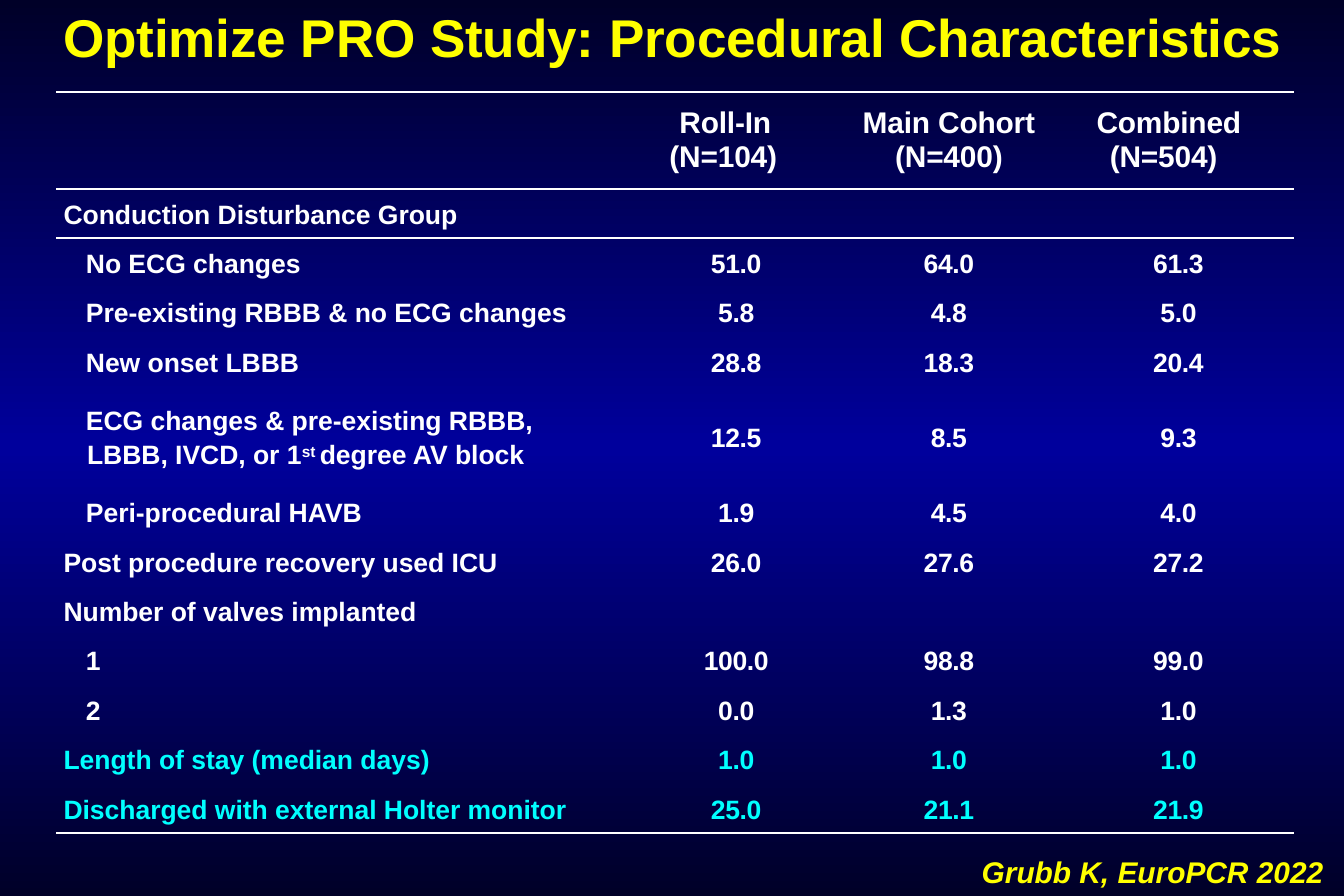
from copy import deepcopy

from lxml.etree import SubElement
from pptx import Presentation
from pptx.dml.color import RGBColor
from pptx.enum.text import MSO_ANCHOR, PP_ALIGN
from pptx.oxml.ns import qn
from pptx.util import Pt

WHITE = RGBColor(0xFF, 0xFF, 0xFF)
YELLOW = RGBColor(0xFF, 0xFF, 0x00)
CYAN = RGBColor(0x00, 0xFF, 0xFF)
NAVY = RGBColor(0x00, 0x00, 0x28)
BLUE = RGBColor(0x00, 0x00, 0x9C)
PLAIN = "{2D5ABB26-0587-4C30-8999-92F81FD0307C}"

COLS = [360.7, 101.5, 151.9, 131.8]
HEAD = [
    ("Roll-In\n(N=104)", (15, 9), PP_ALIGN.LEFT),
    ("Main Cohort\n(N=400)", (0, 0), PP_ALIGN.CENTER),
    ("Combined\n(N=504)", (13, 21), PP_ALIGN.LEFT),
]
ROWS = [
    (0, "Conduction Disturbance Group", ""),
    (1, "No ECG changes", "51.0 64.0 61.3"),
    (1, "Pre-existing RBBB & no ECG changes", "5.8 4.8 5.0"),
    (1, "New onset LBBB", "28.8 18.3 20.4"),
    (1, "ECG changes & pre-existing RBBB,\nLBBB, IVCD, or 1^st ^degree AV block",
     "12.5 8.5 9.3"),
    (1, "Peri-procedural HAVB", "1.9 4.5 4.0"),
    (0, "Post procedure recovery used ICU", "26.0 27.6 27.2"),
    (0, "Number of valves implanted", ""),
    (1, "1", "100.0 98.8 99.0"),
    (1, "2", "0.0 1.3 1.0"),
    (0, "Length of stay (median days)", "1.0 1.0 1.0"),
    (0, "Discharged with external Holter monitor", "25.0 21.1 21.9"),
]


class Deck:
    def __init__(self, wide, high):
        self.show = Presentation()
        self.show.slide_width, self.show.slide_height = Pt(wide), Pt(high)
        self.slide = self.show.slides.add_slide(self.show.slide_layouts[6])
        self.style = {"name": "Arial", "bold": True}

    def back(self, tones):
        fill = self.slide.background.fill
        fill.gradient()
        fill.gradient_angle = 270
        stops = next(self.slide.element.iter(qn("a:gsLst")))
        stops.append(deepcopy(stops[0]))
        for num, (stop, tone) in enumerate(zip(fill.gradient_stops, tones)):
            stop.position = num / (len(tones) - 1)
            stop.color.rgb = tone

    def words(self, frame, text, tone, size, indents=(0, 0), space=0,
              para={}, **more):
        for num, line in enumerate(text.split("\n")):
            item = frame.add_paragraph() if num else frame.paragraphs[0]
            for key, value in para.items():
                setattr(item, key, value)
            if num and "line_spacing" not in para:
                item.space_before = Pt(2.8)
            props = item._p.get_or_add_pPr()
            props.set("marL", str(Pt(indents[num])))
            props.set("indent", "0")
            for part, piece in enumerate(line.split("^")):
                run = item.add_run()
                run.text = piece
                style = {**self.style, "size": Pt(size), **more}
                for key, value in style.items():
                    setattr(run.font, key, value)
                run.font.color.rgb = tone
                marks = run._r.get_or_add_rPr()
                marks.set("spc", str(space))
                if part % 2:
                    marks.set("baseline", "26000")

    def text(self, box, text, tone, size, inset=None, **more):
        frame = self.slide.shapes.add_textbox(*map(Pt, box)).text_frame
        frame.word_wrap = True
        if inset:
            self.inset(frame, inset)
        self.words(frame, text, tone, size, **more)

    def inset(self, item, sides):
        for side, value in zip(("left", "top", "right", "bottom"), sides):
            setattr(item, "margin_" + side, Pt(value))

    def table(self, box, cols, rows):
        frame = self.slide.shapes.add_table(len(rows), len(cols), *map(Pt, box))
        grid = frame.table
        grid.first_row = grid.horz_banding = False
        next(grid._tbl.iter(qn("a:tableStyleId"))).text = PLAIN
        for col, wide in zip(grid.columns, cols):
            col.width = Pt(wide)
        for row, high in zip(grid.rows, rows):
            row.height = Pt(high)
        for cell in grid.iter_cells():
            cell.fill.background()
            cell.vertical_anchor = MSO_ANCHOR.MIDDLE
            self.inset(cell, (0, 0, 0, 0))
        return grid

    def rule(self, cell, sides, tone):
        props = cell._tc.get_or_add_tcPr()
        for num, side in enumerate(sides):
            line = SubElement(props, qn("a:ln" + side), w=str(Pt(1.5)))
            fill = SubElement(line, qn("a:solidFill"))
            SubElement(fill, qn("a:srgbClr"), val=str(tone))
            props.insert(num, line)


def main():
    deck = Deck(810, 540)
    deck.back([NAVY, BLUE, NAVY])
    deck.text((0, 0.7, 810, 39.6), "Optimize PRO Study: Procedural Characteristics",
              YELLOW, 32, inset=(0, 1.7, 0, 0), space=-10,
              para={"alignment": PP_ALIGN.CENTER})
    deck.text((584.6, 511.2, 225.4, 28.8), "Grubb K, EuroPCR 2022",
              YELLOW, 18, italic=True)

    highs = [58.3] + [61.2 if "\n" in label else 29.75 for _, label, _ in ROWS]
    grid = deck.table((33.8, 55.4, sum(COLS), sum(highs)), COLS, highs)
    for col, (text, indents, side) in enumerate(HEAD, 1):
        deck.words(grid.cell(0, col).text_frame, text, WHITE, 18, indents, -10,
                   para={"alignment": side, "line_spacing": Pt(20.5)})
    for row, (level, label, values) in enumerate(ROWS, 1):
        tone = CYAN if row > len(ROWS) - 2 else WHITE
        cell = grid.cell(row, 0)
        deck.inset(cell, (0, 2, 0, 0))
        deck.words(cell.text_frame, label, tone, 16,
                   (18, 18.7) if level else (4.5, 4.5))
        for col, value in enumerate(values.split(), 1):
            cell = grid.cell(row, col)
            deck.inset(cell, (0, 2, (0, 3, 0, 7)[col], 0))
            deck.words(cell.text_frame, value, tone, 16, space=-20,
                       para={"alignment": PP_ALIGN.CENTER})
    for row, sides in ((0, "TB"), (1, "T"), (len(ROWS), "B")):
        for col in range(len(COLS)):
            deck.rule(grid.cell(row, col), sides, WHITE)

    deck.show.save("out.pptx")


if __name__ == "__main__":
    main()
